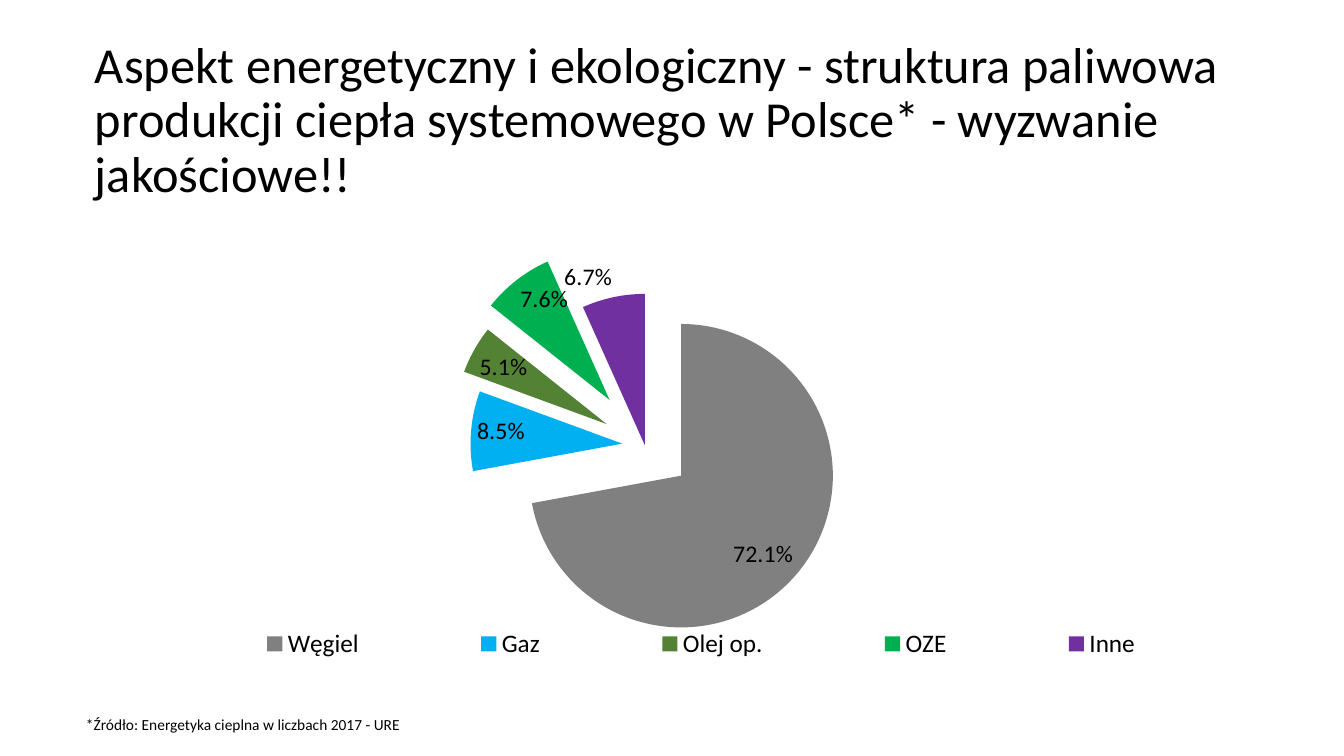
from pptx import Presentation
from pptx import util as u
from pptx.chart.data import CategoryChartData
from pptx.dml.color import RGBColor
from pptx.enum import chart as ch, text
from pptx.oxml import parse_xml
from pptx.oxml.ns import nsdecls, qn

# Content: boxes are left, top, width, height in px
SLIDE = (1344, 756)
FONT = "Calibri"
TITLE = ("Aspekt energetyczny i ekologiczny - struktura paliwowa produkcji "
         "ciepła systemowego w Polsce* - wyzwanie jakościowe!!")
SOURCE = "*Źródło: Energetyka cieplna w liczbach 2017 - URE"
TITLE_BOX = (85, 34, 1196, 175)
SOURCE_BOX = (76, 699, 1043, 40)
CHART_BOX = (100, 209, 1181, 461)
PIE_BOX = (493, 294, 304, 304)  # the pie before its slices are pulled out
LEGEND_BOX = (153, 624, 1096, 40)  # clear of the lowest slice
FUELS = [  # name, share, colour, explosion in percent of the radius
    ("Węgiel", 72.1, "808080", 31),
    ("Gaz", 8.5, "00B0F0", 15),
    ("Olej op.", 5.1, "548235", 29),
    ("OZE", 7.6, "00B050", 38),
    ("Inne", 6.7, "7030A0", 0),
]
OUTSIDE_LABEL = 4


def px(n):
    return u.Emu(n * 914400 * 10 // 1008)


def color(hex_string):
    return RGBColor.from_string(hex_string)


def set_font(font, size):
    font.name, font.size = FONT, u.Pt(size)
    font.color.rgb = color("000000")


def add_text(box, content, size, anchor, spacing=1.0):
    tf = slide.shapes.add_textbox(*map(px, box)).text_frame
    tf.word_wrap = True
    tf.vertical_anchor = anchor
    p = tf.paragraphs[0]
    p.line_spacing = spacing
    r = p.add_run()
    r.text = content
    set_font(r.font, size)


def chart_layout(box, target=""):
    """Manual layout as fractions of the chart box."""
    left, top, width, height = CHART_BOX
    parts = zip("xywh", (box[0] - left, box[1] - top, box[2], box[3]),
                (width, height, width, height))
    sizes = "".join(f'<c:{k} val="{n / whole:.3f}"/>' for k, n, whole in parts)
    return parse_xml(f'<c:layout {nsdecls("c")}><c:manualLayout>{target}'
                     '<c:xMode val="edge"/><c:yMode val="edge"/>'
                     f'{sizes}</c:manualLayout></c:layout>')


prs = Presentation()
prs.slide_width, prs.slide_height = map(px, SLIDE)
slide = prs.slides.add_slide(prs.slide_layouts[6])

# Title
add_text(TITLE_BOX, TITLE, 36, text.MSO_ANCHOR.MIDDLE, spacing=0.9)

# Pie chart
data = CategoryChartData()
data.categories = [fuel[0] for fuel in FUELS]
data.add_series("Series 1", [fuel[1] for fuel in FUELS])
chart = slide.shapes.add_chart(ch.XL_CHART_TYPE.PIE, *map(px, CHART_BOX), data).chart
chart.has_title = False
set_font(chart.font, 17)
plot = chart.plots[0]
plot.vary_by_categories = True
series = plot.series[0]
for i, (name, share, fill, explosion) in enumerate(FUELS):
    fmt = series.points[i].format
    fmt.fill.solid()
    fmt.fill.fore_color.rgb = color(fill)
    fmt.line.fill.background()
for dpt, fuel in zip(series._element.findall(qn("c:dPt")), FUELS):
    dpt.find(qn("c:spPr")).addprevious(
        parse_xml(f'<c:explosion {nsdecls("c")} val="{fuel[3]}"/>'))

# Percent labels, the last one outside its slice
labels = series.data_labels
labels.show_percentage, labels.show_value = True, False
labels.number_format, labels.number_format_is_linked = "0.0%", False
labels.position = ch.XL_LABEL_POSITION.INSIDE_END
set_font(labels.font, 17)
label = series.points[OUTSIDE_LABEL].data_label
set_font(label.font, 17)
label.position = ch.XL_LABEL_POSITION.OUTSIDE_END
dlbl = labels._element.find(qn("c:dLbl"))
dlbl.find(qn("c:showVal")).set("val", "0")
dlbl.find(qn("c:showPercent")).set("val", "1")
dlbl.find(qn("c:idx")).addnext(
    parse_xml(f'<c:numFmt {nsdecls("c")} formatCode="0.0%" sourceLinked="0"/>'))

# Legend and plot positions
chart.has_legend = True
legend = chart.legend
legend.position = ch.XL_LEGEND_POSITION.RIGHT
legend.include_in_layout = False
set_font(legend.font, 18)
plot_area = chart._chartSpace.chart.plotArea
for parent in (plot_area, legend._element):
    for old in parent.findall(qn("c:layout")):
        parent.remove(old)
plot_area.insert(0, chart_layout(PIE_BOX, '<c:layoutTarget val="inner"/>'))
legend._element.find(qn("c:legendPos")).addnext(chart_layout(LEGEND_BOX))

# Source note
add_text(SOURCE_BOX, SOURCE, 11, text.MSO_ANCHOR.BOTTOM)

prs.save("out.pptx")
